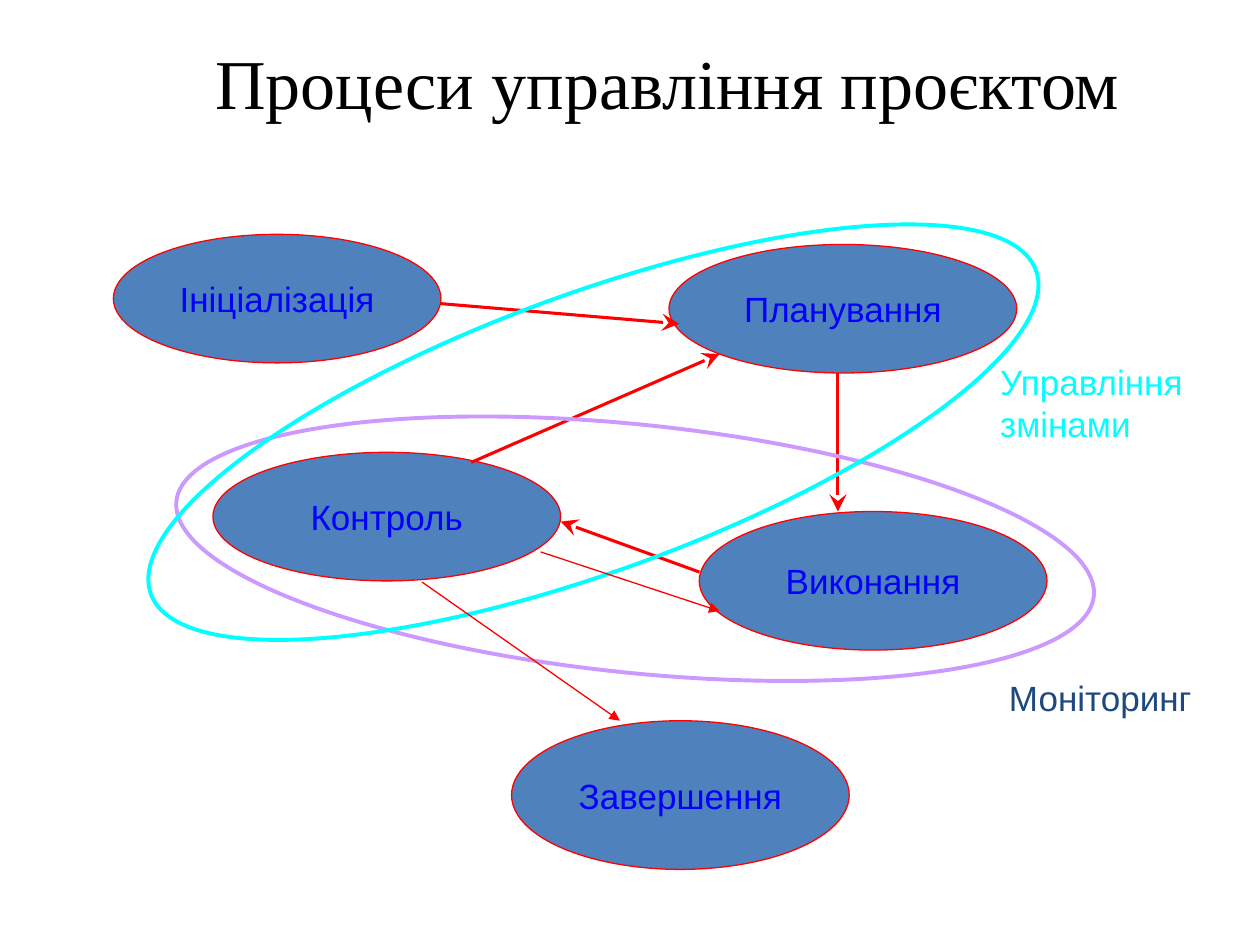
from lxml import etree
from pptx import Presentation
from pptx import util as u
from pptx.dml.color import RGBColor
from pptx.enum import shapes, text
from pptx.oxml.ns import qn

BLACK = RGBColor(0x00, 0x00, 0x00)
BLUE = RGBColor(0x00, 0x00, 0xFF)
STEEL = RGBColor(0x4F, 0x81, 0xBD)
NAVY = RGBColor(0x1F, 0x49, 0x7D)
RED = RGBColor(0xFF, 0x00, 0x00)
LILAC = RGBColor(0xCC, 0x99, 0xFF)
CYAN = RGBColor(0x00, 0xFF, 0xFF)

COLUMNS, ROWS = 100, 75


def write_text(shape, content, size=20, font="Arial", color=BLUE, wrap=True,
               align=text.PP_ALIGN.LEFT, anchor=text.MSO_ANCHOR.TOP):
    frame = shape.text_frame
    frame.word_wrap = wrap
    frame.vertical_anchor = anchor
    paragraph = frame.paragraphs[0]
    paragraph.alignment = align
    run = paragraph.add_run()
    run.text = content
    run.font.size = u.Pt(size)
    run.font.name = font
    run.font.color.rgb = color


class ProcessSlide:
    thin, bold, loop = u.Pt(0.75), u.Pt(1.75), u.Pt(2.25)

    def __init__(self, presentation):
        self.slide = presentation.slides.add_slide(presentation.slide_layouts[6])
        self.column = presentation.slide_width / COLUMNS
        self.row = presentation.slide_height / ROWS

    def place(self, *values):
        return [round(value * (self.row if index % 2 else self.column))
                for index, value in enumerate(values)]

    def label(self, content, box, **style):
        shape = self.slide.shapes.add_textbox(*self.place(*box))
        write_text(shape, content, **style)

    def ellipse(self, box, color, width):
        shape = self.slide.shapes.add_shape(shapes.MSO_SHAPE.OVAL, *self.place(*box))
        shape.shadow.inherit = False
        shape.line.color.rgb = color
        shape.line.width = width
        return shape

    def process(self, content, box):
        shape = self.ellipse(box, RED, self.thin)
        shape.fill.solid()
        shape.fill.fore_color.rgb = STEEL
        write_text(shape, content, wrap=False, align=text.PP_ALIGN.CENTER,
                   anchor=text.MSO_ANCHOR.MIDDLE)

    def cycle(self, box, rotation, color):
        shape = self.ellipse(box, color, self.loop)
        shape.fill.background()
        shape.rotation = rotation

    def arrow(self, start, end, width, head, size):
        connector = self.slide.shapes.add_connector(
            shapes.MSO_CONNECTOR.STRAIGHT, *self.place(*start, *end))
        connector.line.color.rgb = RED
        connector.line.width = width
        line = connector.line._get_or_add_ln()
        etree.SubElement(line, qn("a:tailEnd"), type=head, w=size, len=size)
        etree.SubElement(connector._element.spPr, qn("a:effectLst"))

    def main_arrow(self, start, end):
        self.arrow(start, end, self.bold, "stealth", "lg")

    def side_arrow(self, start, end):
        self.arrow(start, end, self.thin, "triangle", "med")


def main():
    presentation = Presentation()
    presentation.slide_width = u.Inches(10)
    presentation.slide_height = u.Inches(7.5)
    diagram = ProcessSlide(presentation)

    diagram.label("Процеси управління проєктом", (5.9, 2.1, 94.1, 8.7), size=40,
                  font="Times New Roman", color=BLACK,
                  align=text.PP_ALIGN.CENTER, anchor=text.MSO_ANCHOR.MIDDLE)

    for content, box in (
        ("Ініціалізація", (9, 18.6, 26, 10.2)),
        ("Планування", (53.1, 19.4, 27.6, 10.2)),
        ("Контроль", (16.9, 35.9, 27.6, 10.2)),
        ("Виконання", (55.5, 40.6, 27.6, 11)),
        ("Завершення", (40.6, 57.2, 26.8, 11.8)),
    ):
        diagram.process(content, box)

    for start, end in (
        ((35, 24.1), (53.9, 25.7)),
        ((66.5, 29.6), (66.5, 40.6)),
        ((55.5, 45.4), (44.5, 41.4)),
        ((37.4, 36.7), (57.1, 28.1)),
    ):
        diagram.main_arrow(start, end)

    diagram.cycle((13.8, 33.7, 73.2, 19.7), 5.9, LILAC)
    diagram.label("Моніторинг", (79.1, 53.2, 17.6, 4.3), color=NAVY, wrap=False)
    diagram.cycle((9.7, 23.3, 74.8, 22), 339.9, CYAN)
    diagram.label("Управління змінами", (78.4, 28.1, 21.6, 7.7), color=CYAN)

    diagram.side_arrow((33.5, 46.2), (49.2, 57.2))
    diagram.side_arrow((42.9, 43.8), (57.1, 48.5))

    presentation.save("out.pptx")


if __name__ == "__main__":
    main()
